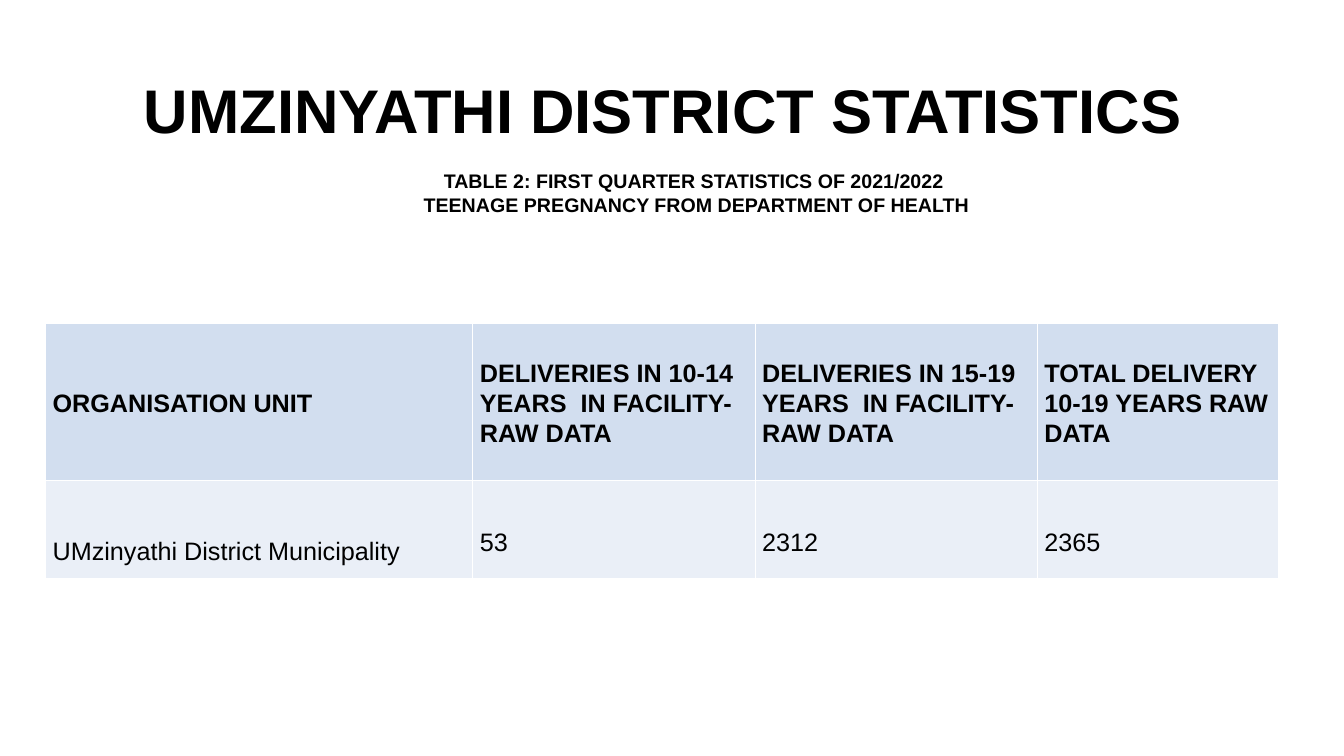
from lxml.etree import SubElement
from pptx import Presentation
from pptx.dml.color import RGBColor
from pptx.enum.text import MSO_ANCHOR as Anchor, PP_ALIGN as Align
from pptx.oxml.ns import qn
from pptx.util import Pt

BLACK = RGBColor(0x00, 0x00, 0x00)
WHITE = RGBColor(0xFF, 0xFF, 0xFF)
HEADER_BLUE = RGBColor(0xD2, 0xDE, 0xEF)
BODY_BLUE = RGBColor(0xEA, 0xEF, 0xF7)

HEADINGS = [
    "ORGANISATION UNIT",
    "DELIVERIES IN 10-14 YEARS  IN FACILITY-RAW DATA",
    "DELIVERIES IN 15-19 YEARS  IN FACILITY-RAW DATA",
    "TOTAL DELIVERY 10-19 YEARS RAW DATA",
]
FIGURES = ["UMzinyathi District Municipality", "53", "2312", "2365"]
COLUMN_WIDTHS = [305.2, 201.6, 201.6, 172]
ROW_HEIGHTS = [112.3, 69.8]


def write_text(frame, lines, size=18, bold=False, align=Align.LEFT,
               spacing=1.0, after=0):
    for index, line in enumerate(lines):
        para = frame.paragraphs[0] if index == 0 else frame.add_paragraph()
        para.alignment = align
        para.line_spacing = spacing
        para.space_after = Pt(after)
        span = para.add_run()
        span.text = line
        span.font.name = "Arial"
        span.font.size = Pt(size)
        span.font.bold = bold
        span.font.color.rgb = BLACK


class StatisticsSlide:
    def __init__(self, deck):
        self.page = deck.slides.add_slide(deck.slide_layouts[6])

    def text_box(self, lines, left, top, width, height,
                 margin_left=7.2, margin_bottom=3.6, **style):
        box = self.page.shapes.add_textbox(Pt(left), Pt(top), Pt(width), Pt(height))
        frame = box.text_frame
        frame.word_wrap = True
        frame.vertical_anchor = Anchor.MIDDLE
        frame.margin_left = Pt(margin_left)
        frame.margin_bottom = Pt(margin_bottom)
        write_text(frame, lines, align=Align.CENTER, **style)

    def table(self, left, top, widths, heights):
        grid = self.page.shapes.add_table(
            len(heights), len(widths), Pt(left), Pt(top),
            Pt(sum(widths)), Pt(sum(heights))).table
        for column, width in zip(grid.columns, widths):
            column.width = Pt(width)
        for row, height in zip(grid.rows, heights):
            row.height = Pt(height)
        return grid

    def cell(self, cell, text, fill, anchor, margin_top, **style):
        cell.fill.solid()
        cell.fill.fore_color.rgb = fill
        cell.vertical_anchor = anchor
        cell.margin_left = cell.margin_right = Pt(5)
        cell.margin_top = Pt(margin_top)
        cell.margin_bottom = Pt(0)
        write_text(cell.text_frame, [text], after=8, **style)
        self.borders(cell)

    def borders(self, cell):
        properties = cell._tc.get_or_add_tcPr()
        for index, side in enumerate(("a:lnL", "a:lnR", "a:lnT", "a:lnB")):
            line = properties.makeelement(qn(side), {"w": str(Pt(1))})
            properties.insert(index, line)
            paint = SubElement(line, qn("a:solidFill"))
            SubElement(paint, qn("a:srgbClr"), val=str(WHITE))


def main():
    deck = Presentation()
    deck.slide_width, deck.slide_height = Pt(960), Pt(540)
    slide = StatisticsSlide(deck)
    slide.text_box(["UMZINYATHI DISTRICT STATISTICS "], 66, 28.8, 828, 104.4,
                   size=44, bold=True, spacing=0.9)
    slide.text_box(["TABLE 2: FIRST QUARTER STATISTICS OF 2021/2022 ",
                    "TEENAGE PREGNANCY FROM DEPARTMENT OF HEALTH"],
                   62, 116.6, 835, 63.4, margin_left=43.2, margin_bottom=25,
                   size=14, bold=True)
    grid = slide.table(32.6, 231.1, COLUMN_WIDTHS, ROW_HEIGHTS)
    for index, (heading, figure) in enumerate(zip(HEADINGS, FIGURES)):
        slide.cell(grid.cell(0, index), heading, HEADER_BLUE, Anchor.MIDDLE, 0.7,
                   bold=True, spacing=1.06)
        is_name = index == 0
        slide.cell(grid.cell(1, index), figure, BODY_BLUE, Anchor.TOP,
                   39.5 if is_name else 31.5, spacing=1.06 if is_name else 1.15)
    deck.save("out.pptx")


if __name__ == "__main__":
    main()
